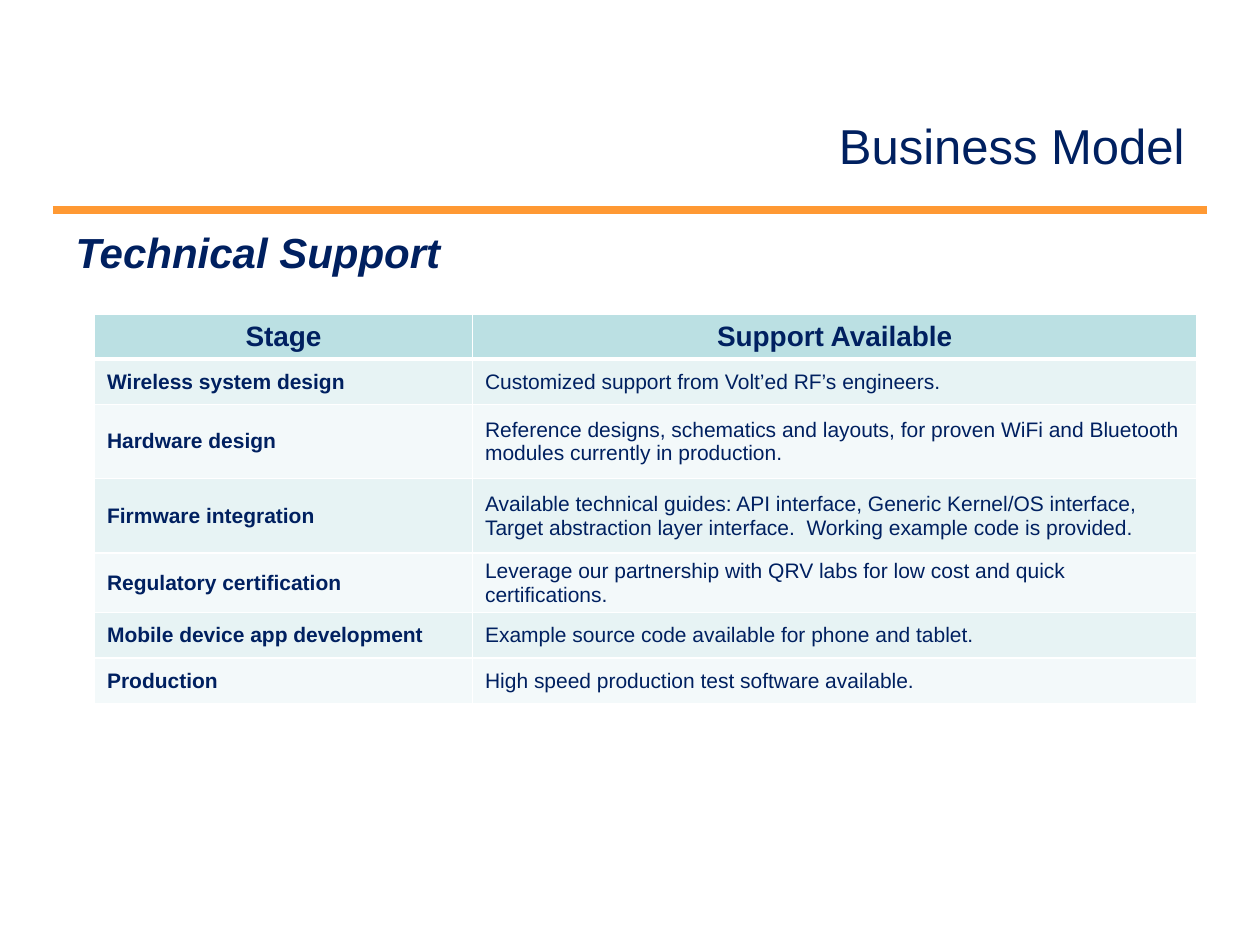
from lxml.etree import SubElement
from pptx import Presentation
from pptx.dml.color import RGBColor
from pptx.enum.shapes import MSO_CONNECTOR
from pptx.enum.text import MSO_ANCHOR, MSO_AUTO_SIZE, PP_ALIGN
from pptx.oxml.ns import qn
from pptx.util import Inches, Pt

NAVY, ORANGE, WHITE = "002060", "FF9933", "FFFFFF"
HEAD, BANDS = "BBE0E3", ("E7F3F4", "F3F9FA")
COLS = (3, 5.75)
TALL, SHORT = 0.59, 0.36
ROWS = [
    (SHORT, "Stage", "Support Available"),
    (SHORT, "Wireless system design",
     "Customized support from Volt’ed RF’s engineers."),
    (TALL, "Hardware design",
     "Reference designs, schematics and layouts, for proven WiFi and "
     "Bluetooth modules currently in production."),
    (TALL, "Firmware integration",
     "Available technical guides: API interface, Generic Kernel/OS interface, "
     "Target abstraction layer interface.  Working example code is provided."),
    (SHORT, "Regulatory certification",
     "Leverage our partnership with QRV labs for low cost and quick "
     "certifications."),
    (SHORT, "Mobile device app development",
     "Example source code available for phone and tablet."),
    (SHORT, "Production", "High speed production test software available."),
]


def color(text):
    return RGBColor.from_string(text)


def style(para, size, bold=False, italic=False, align=PP_ALIGN.LEFT):
    para.alignment = align
    for run in para.runs:
        font = run.font
        font.name, font.size = "Arial", Pt(size)
        font.bold, font.italic = bold, italic
        font.color.rgb = color(NAVY)


def place(shape, left, top, width, height):
    shape.left, shape.top = Inches(left), Inches(top)
    shape.width, shape.height = Inches(width), Inches(height)


def add_title(slide, *box):
    title = slide.shapes.title
    place(title, *box)
    frame = title.text_frame
    frame.text = "Business Model"
    frame.auto_size = MSO_AUTO_SIZE.NONE
    frame.vertical_anchor = MSO_ANCHOR.MIDDLE
    style(frame.paragraphs[0], 28, align=PP_ALIGN.RIGHT)


def add_rule(slide, left, top, width):
    rule = slide.shapes.add_connector(
        MSO_CONNECTOR.STRAIGHT, Inches(left), Inches(top),
        Inches(left + width), Inches(top))
    rule.line.color.rgb = color(ORANGE)
    rule.line.width = Pt(4.5)
    SubElement(rule._element.spPr, qn("a:effectLst"))


def add_body(slide, *box):
    body = slide.placeholders[1]
    place(body, *box)
    frame = body.text_frame
    frame.text = "Technical Support"
    frame.auto_size = MSO_AUTO_SIZE.NONE
    para = frame.paragraphs[0]
    props = para._p.get_or_add_pPr()
    props.set("marL", "0")
    props.set("indent", "0")
    SubElement(props, qn("a:buNone"))
    para.space_before = Pt(0)
    style(para, 24, bold=True, italic=True)


def add_edges(cell, widths):
    props = cell._tc.get_or_add_tcPr()
    for side, width in zip("LRTB", widths):
        edge = SubElement(props, qn(f"a:ln{side}"), w=str(Pt(width)))
        fill = SubElement(edge, qn("a:solidFill"))
        SubElement(fill, qn("a:srgbClr"), val=WHITE)


def add_grid(slide, left, top, width, height):
    table = slide.shapes.add_table(
        len(ROWS), len(COLS), Inches(left), Inches(top),
        Inches(width), Inches(height)).table
    for col, part in zip(table.columns, COLS):
        col.width = Inches(width * part / sum(COLS))
    for i, (tall, *texts) in enumerate(ROWS):
        table.rows[i].height = Inches(tall)
        for j, text in enumerate(texts):
            cell = table.cell(i, j)
            cell.text = text
            cell.vertical_anchor = MSO_ANCHOR.MIDDLE
            # Thick line between the header and the first row
            add_edges(cell, (1, 1, 3 if i == 1 else 1, 3 if i == 0 else 1))
            cell.fill.solid()
            cell.fill.fore_color.rgb = color(BANDS[(i - 1) % 2] if i else HEAD)
            para = cell.text_frame.paragraphs[0]
            if i == 0:
                style(para, 16, bold=True, align=PP_ALIGN.CENTER)
            else:
                style(para, 12, bold=j == 0)


def main():
    deck = Presentation()
    deck.slide_width, deck.slide_height = Inches(10), Inches(7.5)
    slide = deck.slides.add_slide(deck.slide_layouts[1])
    # Heading
    add_rule(slide, 0.42, 1.67, 9.16)
    add_title(slide, 3.67, 0.75, 5.83, 0.8)
    # Content
    add_body(slide, 0.5, 1.75, 9, 4.95)
    add_grid(slide, 0.75, 2.49, 8.75, 3.12)
    deck.save("out.pptx")


if __name__ == "__main__":
    main()
